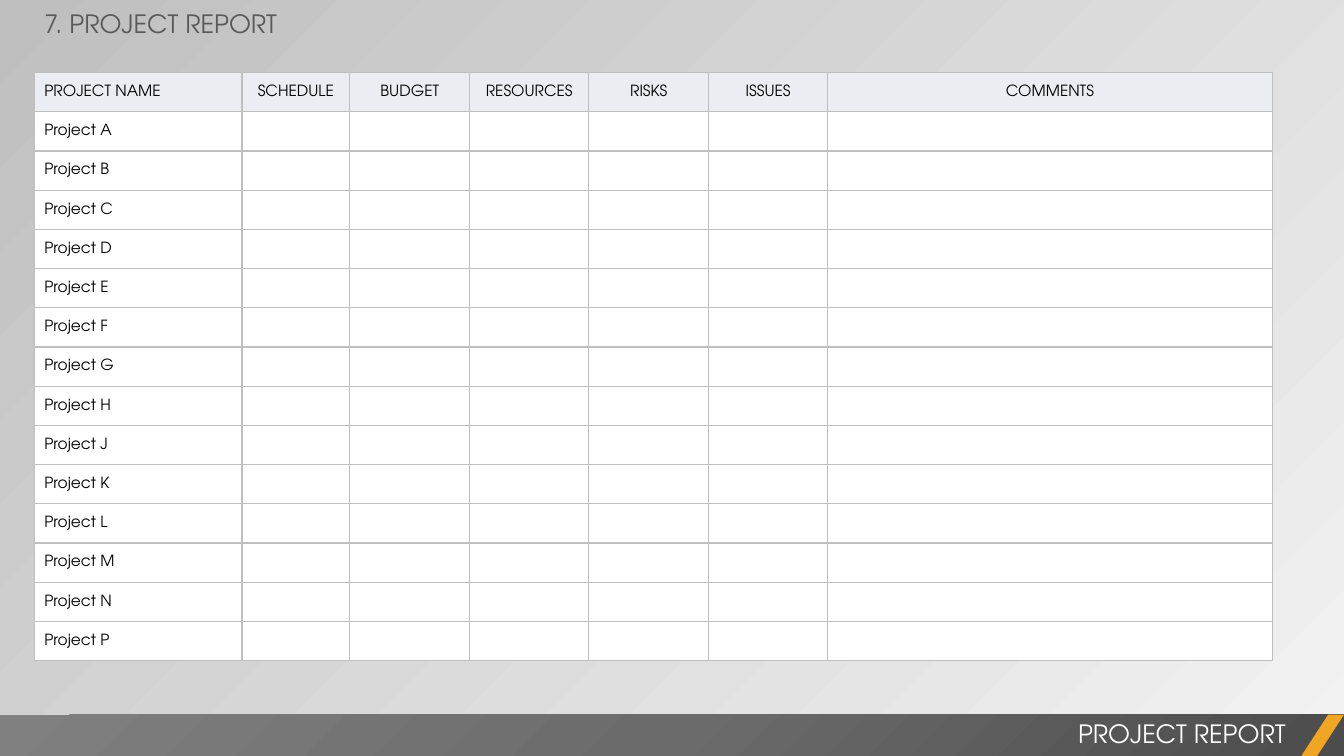
from dataclasses import dataclass
from pptx import Presentation
from pptx.dml.color import RGBColor
from pptx.enum.shapes import MSO_SHAPE as Shape
from pptx.enum.text import MSO_ANCHOR as Anchor, MSO_AUTO_SIZE as AutoSize, PP_ALIGN as Align
from pptx.oxml import parse_xml
from pptx.oxml.ns import nsdecls
from pptx.util import Inches, Pt


@dataclass(frozen=True)
class Theme:
    font: str = "TeX Gyre Adventor"
    heading_size: int = 18
    table_size: int = 11
    heading: str = "595959"
    text: str = "000000"
    white: str = "FFFFFF"
    header_fill: str = "EAEEF3"
    grid: str = "BFBFBF"
    accent: str = "F0A622"
    backdrop: tuple = ("F2F2F2", "BFBFBF")
    bar: tuple = ("4C4C4C", "6B6B6B", "808080")


theme = Theme()


def style_text(frame, text, size, color, align):
    para = frame.paragraphs[0]
    para.text = text
    para.alignment = align
    para.font.name = theme.font
    para.font.size = Pt(size)
    para.font.color.rgb = RGBColor.from_string(color)


def add_borders(cell):
    for side in ("lnL", "lnR", "lnT", "lnB"):
        cell_format.append(parse_xml(
            f'<a:{side} {nsdecls("a")} w="{Pt(1)}"><a:solidFill>'
            f'<a:srgbClr val="{theme.grid}"/></a:solidFill></a:{side}>'))


deck = Presentation()
deck.slide_width = Inches(13.33)
deck.slide_height = Inches(7.5)
page = deck.slides.add_slide(deck.slide_layouts[5])

backdrop = page.background.fill
backdrop.gradient()
backdrop.gradient_angle = 135
for stop, color in zip(backdrop.gradient_stops, theme.backdrop):
    stop.color.rgb = RGBColor.from_string(color)

headers = ["PROJECT NAME", "SCHEDULE", "BUDGET", "RESOURCES", "RISKS", "ISSUES", "COMMENTS"]
widths = [2.06, 1.07, 1.19, 1.18, 1.19, 1.18, 4.41]
rows = [headers] + [[f"Project {letter}"] + [""] * 6 for letter in "ABCDEFGHJKLMNP"]

table = page.shapes.add_table(
    len(rows), len(headers), Inches(0.34), Inches(0.72), Inches(12.28), Inches(5.84)).table
table.first_row = False
table.horz_banding = False
for column, width in zip(table.columns, widths):
    column.width = Inches(width)

for row_index, row in enumerate(rows):
    for column_index, text in enumerate(row):
        cell = table.cell(row_index, column_index)
        cell.vertical_anchor = Anchor.MIDDLE
        cell.margin_top = cell.margin_bottom = 0
        cell_format = cell._tc.get_or_add_tcPr()
        add_borders(cell_format)
        cell.fill.solid()
        cell.fill.fore_color.rgb = RGBColor.from_string(
            theme.white if row_index else theme.header_fill)
        style_text(cell.text_frame, text, theme.table_size, theme.text,
                   Align.CENTER if column_index else Align.LEFT)

title = page.shapes.title
title.left, title.top, title.width, title.height = map(Inches, (0.34, 0.03, 2.56, 0.4))
title.text_frame.word_wrap = False
title.text_frame.auto_size = AutoSize.SHAPE_TO_FIT_TEXT
title.text_frame.vertical_anchor = Anchor.TOP
style_text(title.text_frame, "7. PROJECT REPORT", theme.heading_size, theme.heading, Align.LEFT)

bar = page.shapes.add_shape(
    Shape.RECTANGLE, 0, Inches(7.09), deck.slide_width, Inches(0.42))
bar.shadow.inherit = False
bar.line.fill.background()
bar.fill.gradient()
stops = "".join(
    f'<a:gs pos="{index * 50000}"><a:srgbClr val="{color}"/></a:gs>'
    for index, color in enumerate(theme.bar))
bar_gradient = bar._element.spPr.find("{*}gradFill")
bar_gradient.getparent().replace(bar_gradient, parse_xml(
    f'<a:gradFill {nsdecls("a")}><a:gsLst>{stops}</a:gsLst><a:path path="circle">'
    '<a:fillToRect l="100000" t="100000"/></a:path></a:gradFill>'))

footer = page.shapes.add_textbox(Inches(5.25), Inches(7.08), Inches(7.6), Inches(0.4))
footer.text_frame.word_wrap = True
footer.text_frame.auto_size = AutoSize.SHAPE_TO_FIT_TEXT
style_text(footer.text_frame, "PROJECT REPORT", theme.heading_size, theme.white, Align.RIGHT)

slash = page.shapes.add_shape(
    Shape.PARALLELOGRAM, Inches(12.9), Inches(7.09), Inches(0.43), Inches(0.42))
slash.adjustments[0] = 0.65
slash.shadow.inherit = False
slash.fill.solid()
slash.fill.fore_color.rgb = RGBColor.from_string(theme.accent)
slash.line.fill.background()

deck.save("out.pptx")
